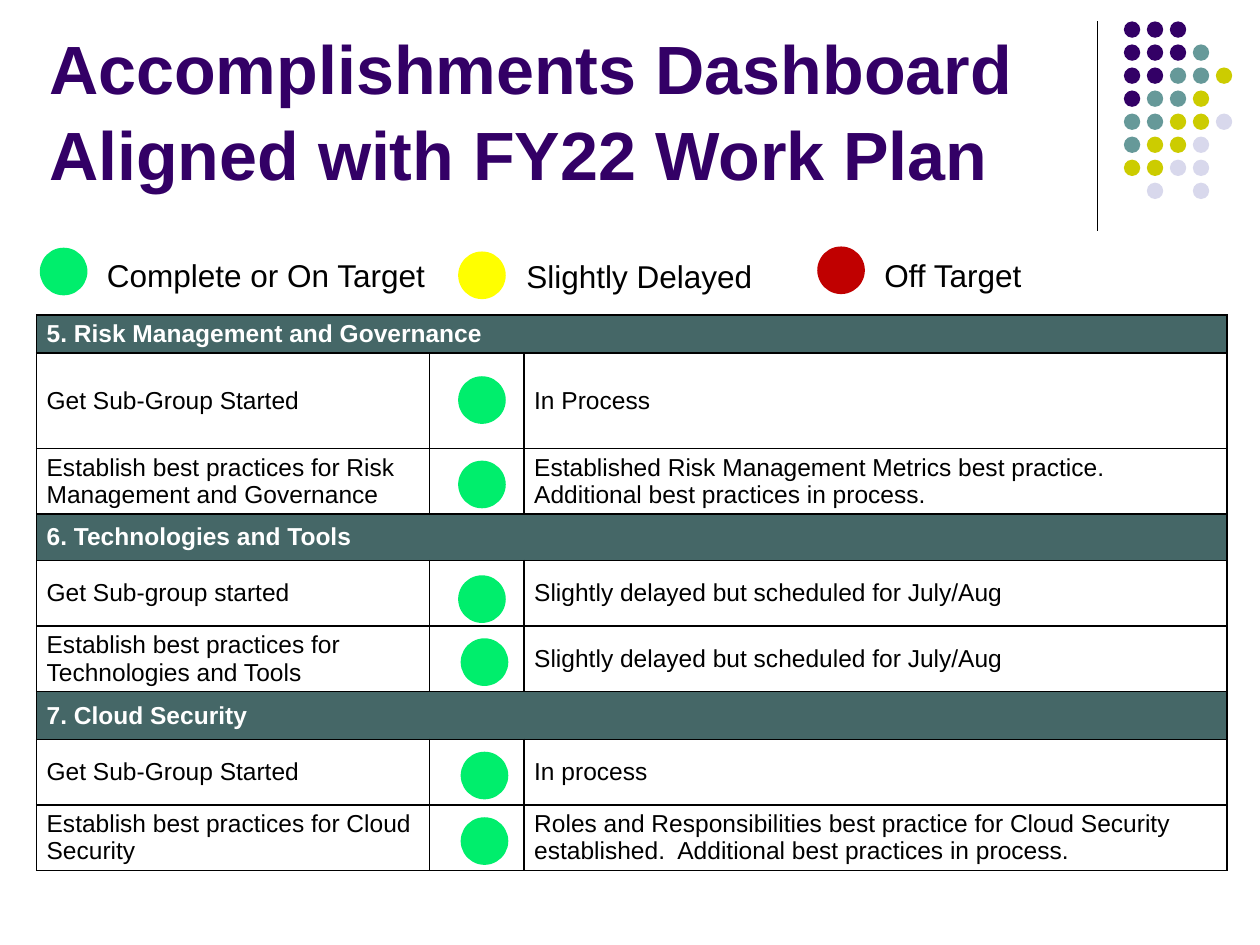
"""Build the accomplishments dashboard slide for the FY22 work plan."""
from dataclasses import dataclass
from typing import Optional

import pptx
import pptx.dml.color
import pptx.enum.shapes
import pptx.enum.text
import pptx.oxml
import pptx.oxml.ns
import pptx.util
from lxml import etree

Inches = pptx.util.Inches
Pt = pptx.util.Pt

COLORS = {
    "text": "000000", "white": "FFFFFF", "title": "330066", "band": "456767",
    "green": "00EE6C", "yellow": "FFFF00", "red": "C00000",
    "P": "330066", "T": "669999", "Y": "CCCC00", "L": "D8D8EC",
}
FONT = "Arial"
DOT_ROWS = ["PPP", "PPPT", "PPTTY", "PTTY", "TTYYL", "TYYL", "YYLL", " L L"]
DOT_LEFT, DOT_TOP, DOT_SIZE = 8.92, 0.17, 0.13
DOT_STEP_X, DOT_STEP_Y = 0.73 / 4, 1.28 / 7
COL_WIDTHS = [3.12, 0.75, 5.58]
STATUS_SIZE = 0.35


@dataclass
class Status:
    left: float
    top: float
    color: str = "green"


@dataclass
class Legend:
    status: Status
    left: float
    top: float
    width: float
    label: str


@dataclass
class Row:
    height: float
    task: str
    note: str = ""
    status: Optional[Status] = None


LEGENDS = [
    Legend(Status(0.33, 1.98), 0.75, 1.98, 2.75, "Complete or On Target"),
    Legend(Status(3.65, 2.01, "yellow"), 4.08, 1.99, 2.01, "Slightly Delayed"),
    Legend(Status(6.5, 1.97, "red"), 6.92, 1.98, 1.3, "Off Target"),
]
DELAYED = "Slightly delayed but scheduled for July/Aug"
ROWS = [
    Row(0.3, "5. Risk Management and Governance"),
    Row(0.76, "Get Sub-Group Started", "In Process", Status(3.65, 3)),
    Row(0.52, "Establish best practices for Risk Management and Governance",
        "Established Risk Management Metrics best practice.  "
        "Additional best practices in process.", Status(3.65, 3.67)),
    Row(0.37, "6. Technologies and Tools"),
    Row(0.52, "Get Sub-group started", DELAYED, Status(3.65, 4.58)),
    Row(0.52, "Establish best practices for Technologies and Tools", DELAYED,
        Status(3.67, 5.08)),
    Row(0.38, "7. Cloud Security"),
    Row(0.52, "Get Sub-Group Started", "In process", Status(3.67, 5.98)),
    Row(0.52, "Establish best practices for Cloud Security",
        "Roles and Responsibilities best practice for Cloud Security established.  "
        "Additional best practices in process.", Status(3.67, 6.5)),
]


def rgb(name: str) -> pptx.dml.color.RGBColor:
    return pptx.dml.color.RGBColor.from_string(COLORS[name])


def write(tf, text: str, size: float, color: str = "text", bold: bool = False) -> None:
    tf.text = text
    for r in tf.paragraphs[0].runs:
        r.font.name, r.font.size, r.font.bold = FONT, Pt(size), bold
        r.font.color.rgb = rgb(color)


def add_dot(shapes, left: float, top: float, size: float, color: str, line: float = 0) -> None:
    sp = shapes.add_shape(pptx.enum.shapes.MSO_SHAPE.OVAL,
                          Inches(left), Inches(top), Inches(size), Inches(size))
    sp.shadow.inherit = False
    sp.fill.solid()
    sp.fill.fore_color.rgb = rgb(color)
    if line:
        sp.line.color.rgb = rgb(color)
        sp.line.width = Pt(line)
    else:
        sp.line.fill.background()


def add_status(shapes, status: Status) -> None:
    add_dot(shapes, status.left, status.top, STATUS_SIZE, status.color, 2)


def add_ornament(s) -> None:
    line = s.shapes.add_connector(pptx.enum.shapes.MSO_CONNECTOR.STRAIGHT,
                                  Inches(8.71), Inches(0.17), Inches(8.71), Inches(1.83))
    line.line.color.rgb = rgb("text")
    line.line.width = Pt(0.75)
    etree.SubElement(line._element.spPr, pptx.oxml.ns.qn("a:effectLst"))
    group = s.shapes.add_group_shape()
    for i, dots in enumerate(DOT_ROWS):
        for j, color in enumerate(dots):
            if color != " ":
                add_dot(group.shapes, DOT_LEFT + j * DOT_STEP_X,
                        DOT_TOP + i * DOT_STEP_Y, DOT_SIZE, color)


def add_title(s, text: str) -> None:
    sp = s.shapes.title
    sp.left, sp.top, sp.width, sp.height = Inches(0.29), Inches(1.08), Inches(8.62), Inches(0.51)
    tf = sp.text_frame
    write(tf, text, 39, "title", True)
    tf.word_wrap = True
    tf.auto_size = pptx.enum.text.MSO_AUTO_SIZE.NONE
    tf.vertical_anchor = pptx.enum.text.MSO_ANCHOR.BOTTOM
    p = tf.paragraphs[0]
    p.alignment = pptx.enum.text.PP_ALIGN.LEFT
    p.line_spacing = 1.05


def add_legend(s, legend: Legend) -> None:
    add_status(s.shapes, legend.status)
    sp = s.shapes.add_textbox(Inches(legend.left), Inches(legend.top),
                              Inches(legend.width), Inches(0.4))
    write(sp.text_frame, legend.label, 18)
    sp.text_frame.word_wrap = False
    sp.text_frame.auto_size = pptx.enum.text.MSO_AUTO_SIZE.SHAPE_TO_FIT_TEXT


def style_cell(cell, fill: Optional[str]) -> None:
    cell.margin_left = cell.margin_right = Inches(0.08)
    cell.margin_top = cell.margin_bottom = Inches(0.04)
    cell.vertical_anchor = pptx.enum.text.MSO_ANCHOR.MIDDLE
    tcPr = cell._tc.get_or_add_tcPr()
    for side in ("lnL", "lnR", "lnT", "lnB"):
        tcPr.append(pptx.oxml.parse_xml(
            f'<a:{side} {pptx.oxml.ns.nsdecls("a")} w="{Pt(1)}"><a:solidFill>'
            f'<a:srgbClr val="{COLORS["text"]}"/></a:solidFill></a:{side}>'))
    if fill:
        cell.fill.solid()
        cell.fill.fore_color.rgb = rgb(fill)
    else:
        cell.fill.background()


def add_dashboard(s, rows: list[Row]) -> None:
    frame = s.shapes.add_table(len(rows), len(COL_WIDTHS), Inches(0.29), Inches(2.5),
                               Inches(sum(COL_WIDTHS)), Inches(sum(r.height for r in rows)))
    table = frame.table
    table.first_row = table.horz_banding = False
    for column, width in zip(table.columns, COL_WIDTHS):
        column.width = Inches(width)
    for i, row in enumerate(rows):
        table.rows[i].height = Inches(row.height)
        cells = [table.cell(i, j) for j in range(len(COL_WIDTHS))]
        for cell in cells:
            style_cell(cell, None if row.status else "band")
        if row.status:
            write(cells[0].text_frame, row.task, 14)
            write(cells[2].text_frame, row.note, 14)
            add_status(s.shapes, row.status)
        else:
            cells[0].merge(cells[-1])
            write(cells[0].text_frame, row.task, 14, "white", True)


def main() -> None:
    prs = pptx.Presentation()
    prs.slide_width, prs.slide_height = Inches(10), Inches(7.5)
    s = prs.slides.add_slide(prs.slide_layouts[5])
    add_ornament(s)
    add_title(s, "Accomplishments Dashboard Aligned with FY22 Work Plan")
    add_dashboard(s, ROWS)
    for legend in LEGENDS:
        add_legend(s, legend)
    prs.save("out.pptx")


if __name__ == "__main__":
    main()
